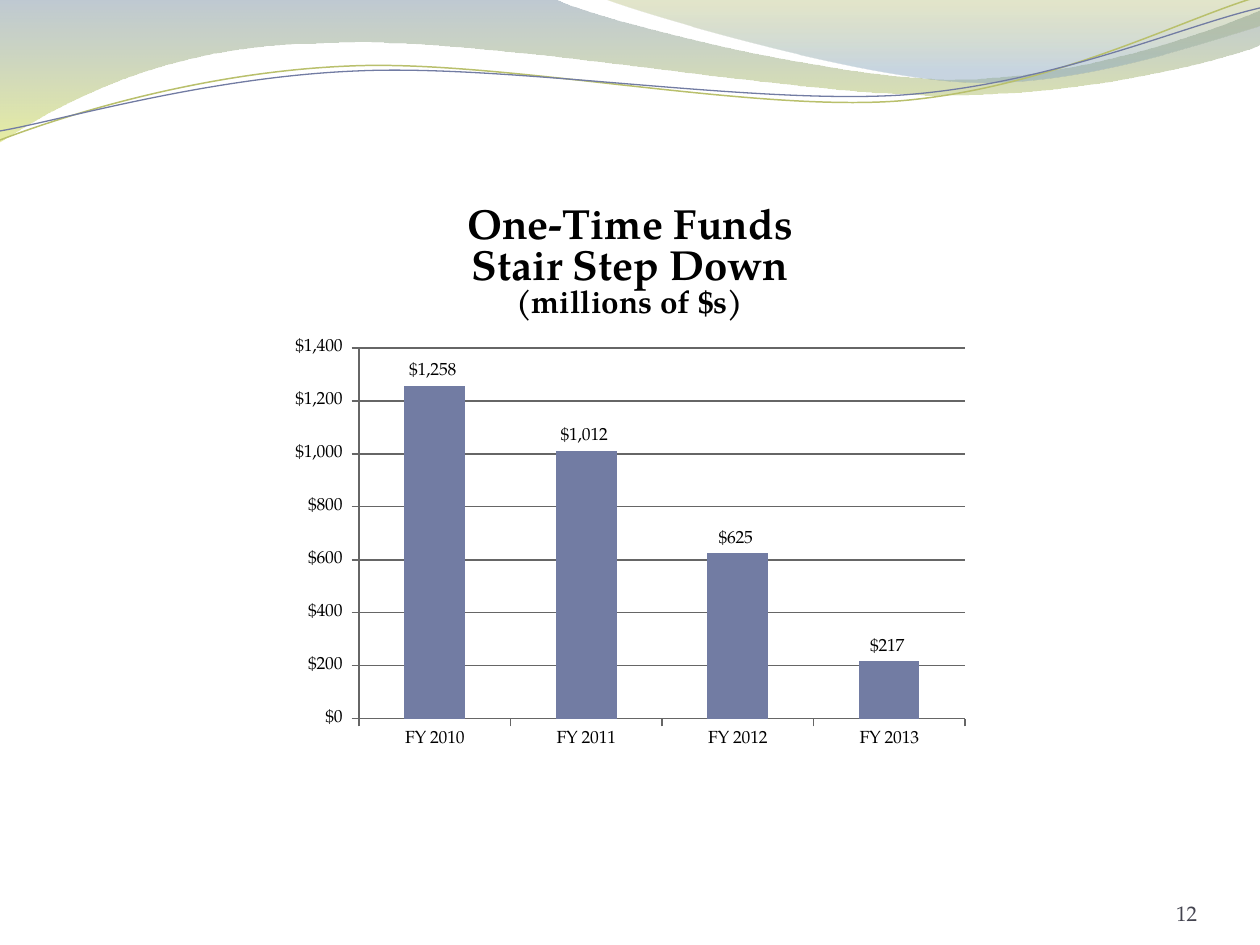
from dataclasses import dataclass

from pptx import Presentation
from pptx import util as u
from pptx.chart.data import CategoryChartData
from pptx.dml.color import RGBColor
from pptx.enum import chart as ch
from pptx.enum import text as t
from pptx.oxml import parse_xml
from pptx.oxml.ns import nsdecls, qn
from pptx.oxml.xmlchemy import OxmlElement

EMU_PER_PX = 914400 / 126
SLIDE = (1260, 945)


@dataclass(frozen=True)
class Theme:
    font: str = "TeX Gyre Pagella"
    ink: str = "000000"
    bar: str = "727CA3"
    axis: str = "666666"
    number: str = "43434F"
    label_size: int = 10
    number_size: int = 12
    axis_width: float = 0.75


THEME = Theme()

FUNDS = {"FY 2010": 1258, "FY 2011": 1012, "FY 2012": 625, "FY 2013": 217}
TITLE_LINES = [("One-Time Funds", 24), ("Stair Step Down", 24), ("(millions of $s)", 18)]
DOLLARS = '"$"#,##0_);[Red]\\("$"#,##0\\)'
PAGE_NUMBER = "12"

CHART_BOX = (281, 185, 698, 575)
PLOT_BOX = (359, 348, 606, 371)
NUMBER_BOX = (1092, 876, 105, 50)

# A step of one point is a straight line, a step of three is a Bezier curve.
# A gradient stop is (position, colour, opacity in percent).
WAVES = [
    {"start": (0, -1),
     "steps": [[(554, -1)],
               [(600, 21), (837, 79), (955, 79)],
               [(1075, 79), (1207, 33), (1260, 11)],
               [(1261, 45)],
               [(1239, 55), (1096, 96), (940, 95)],
               [(784, 95), (481, 35), (324, 43)],
               [(163, 44), (58, 105), (-1, 142)]],
     "stops": [(0, "72889B", 45), (1, "D3DE57", 55)]},
    {"start": (604, -1),
     "steps": [[(641, 14), (859, 78), (969, 82)],
               [(1079, 87), (1211, 40), (1260, 26)],
               [(1260, 0)]],
     "stops": [(0, "A4AC50", 30), (0.8, "84A3BD", 45)]},
    {"start": (0, 140),
     "steps": [[(60, 117), (199, 72), (349, 66)],
               [(498, 59), (747, 112), (898, 101)],
               [(1049, 89), (1182, 19), (1257, -3)]],
     "line": ("B9C06C", 0.85)},
    {"start": (0, 131),
     "steps": [[(59, 121), (207, 77), (357, 71)],
               [(508, 64), (752, 105), (903, 95)],
               [(1053, 84), (1182, 26), (1260, 8)]],
     "line": ("727CA3", 0.75)},
]


def px(*lengths):
    return [u.Emu(round(length * EMU_PER_PX)) for length in lengths]


def rgb(colour):
    return RGBColor.from_string(colour)


def set_font(font, size, colour=THEME.ink, bold=False):
    values = {"name": THEME.font, "size": u.Pt(size), "bold": bold}
    for key, value in values.items():
        setattr(font, key, value)
    font.color.rgb = rgb(colour)


def set_line(line, colour, width):
    line.color.rgb = rgb(colour)
    line.width = u.Pt(width)


def bend(wave, steps):
    """Join the three straight segments of each curved step into one Bezier curve."""
    segments = iter(list(wave._element.spPr.iter(qn("a:lnTo"))))
    for step in steps:
        group = [next(segments) for _ in step]
        if len(group) == 3:
            curve = OxmlElement("a:cubicBezTo")
            group[0].addprevious(curve)
            for segment in group:
                curve.append(segment[0])
                segment.getparent().remove(segment)


def add_wave(slide, start, steps, stops=None, line=None):
    builder = slide.shapes.build_freeform(*px(*start))
    builder.add_line_segments([px(*point) for step in steps for point in step],
                              close=bool(stops))
    wave = builder.convert_to_shape()
    bend(wave, steps)
    wave.shadow.inherit = False
    if line:
        wave.fill.background()
        set_line(wave.line, *line)
        return
    wave.line.fill.background()
    wave.fill.gradient()
    wave.fill.gradient_angle = 270
    for stop, (position, colour, _) in zip(wave.fill.gradient_stops, stops):
        stop.position = position
        stop.color.rgb = rgb(colour)
    for colour, (_, _, opacity) in zip(wave._element.spPr.iter(qn("a:srgbClr")), stops):
        alpha = OxmlElement("a:alpha")
        alpha.set("val", str(opacity * 1000))
        colour.append(alpha)


def place_plot(chart):
    """Fix the inner plot area as fractions of the chart box."""
    left, top, width, height = CHART_BOX
    x, y, w, h = PLOT_BOX
    fractions = {"x": (x - left) / width, "y": (y - top) / height,
                 "w": w / width, "h": h / height}
    sizes = "".join(f'<c:{key} val="{value:.4f}"/>' for key, value in fractions.items())
    plot_area = chart._chartSpace.chart.plotArea
    for old in plot_area.findall(qn("c:layout")):
        plot_area.remove(old)
    plot_area.insert(0, parse_xml(
        f'<c:layout {nsdecls("c")}><c:manualLayout><c:layoutTarget val="inner"/>'
        f'<c:xMode val="edge"/><c:yMode val="edge"/>{sizes}</c:manualLayout></c:layout>'))


def add_funds_chart(slide):
    data = CategoryChartData()
    data.categories = list(FUNDS)
    data.add_series("Series 1", list(FUNDS.values()))
    chart = slide.shapes.add_chart(ch.XL_CHART_TYPE.COLUMN_CLUSTERED,
                                   *px(*CHART_BOX), data).chart
    set_font(chart.font, THEME.label_size)
    chart.has_legend = False

    title = chart.chart_title.text_frame
    for i, (words, size) in enumerate(TITLE_LINES):
        paragraph = title.add_paragraph() if i else title.paragraphs[0]
        run = paragraph.add_run()
        run.text = words
        set_font(run.font, size, bold=True)

    plot = chart.plots[0]
    plot.gap_width = 150
    plot.vary_by_categories = False
    plot.series[0].format.fill.solid()
    plot.series[0].format.fill.fore_color.rgb = rgb(THEME.bar)
    plot.has_data_labels = True
    labels = plot.data_labels
    label_format = {"show_value": True, "number_format": DOLLARS,
                    "number_format_is_linked": False,
                    "position": ch.XL_LABEL_POSITION.OUTSIDE_END}
    for key, value in label_format.items():
        setattr(labels, key, value)
    set_font(labels.font, THEME.label_size)

    amounts = chart.value_axis
    scale = {"minimum_scale": 0, "maximum_scale": 1400, "major_unit": 200,
             "has_major_gridlines": True}
    for key, value in scale.items():
        setattr(amounts, key, value)
    amounts.tick_labels.number_format = DOLLARS
    amounts.tick_labels.number_format_is_linked = False
    set_line(amounts.major_gridlines.format.line, THEME.axis, THEME.axis_width)
    for axis in (amounts, chart.category_axis):
        axis.major_tick_mark = ch.XL_TICK_MARK.OUTSIDE
        set_line(axis.format.line, THEME.axis, THEME.axis_width)
        set_font(axis.tick_labels.font, THEME.label_size)
    place_plot(chart)


def add_page_number(slide):
    frame = slide.shapes.add_textbox(*px(*NUMBER_BOX)).text_frame
    layout = {"word_wrap": True, "vertical_anchor": t.MSO_ANCHOR.BOTTOM, "margin_left": 0,
              "margin_right": 0, "margin_top": 0, "margin_bottom": 0}
    for key, value in layout.items():
        setattr(frame, key, value)
    paragraph = frame.paragraphs[0]
    paragraph.alignment = t.PP_ALIGN.RIGHT
    run = paragraph.add_run()
    run.text = PAGE_NUMBER
    set_font(run.font, THEME.number_size, THEME.number)


def main():
    deck = Presentation()
    deck.slide_width, deck.slide_height = px(*SLIDE)
    slide = deck.slides.add_slide(deck.slide_layouts[6])
    for wave in WAVES:
        add_wave(slide, **wave)
    add_funds_chart(slide)
    add_page_number(slide)
    deck.save("out.pptx")


if __name__ == "__main__":
    main()
